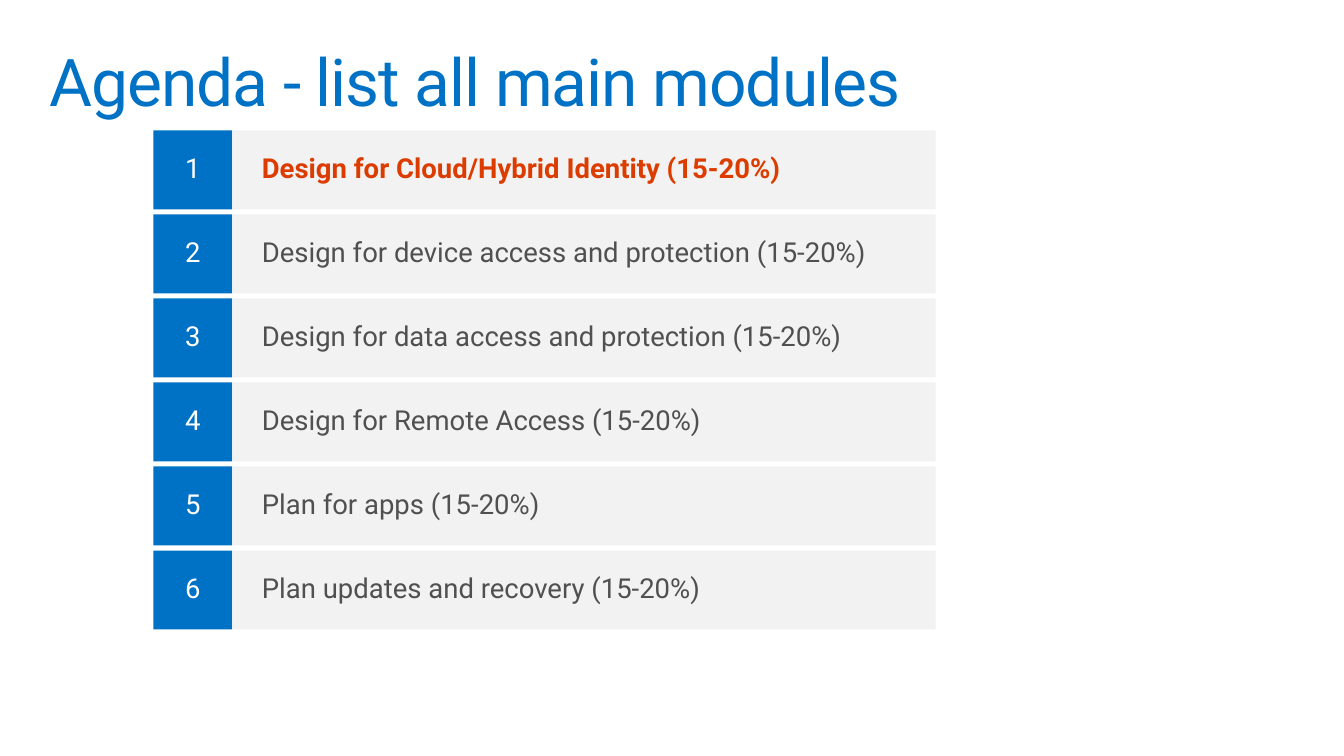
from pptx import Presentation
from pptx.dml.color import RGBColor
from pptx.enum.shapes import MSO_SHAPE
from pptx.enum.text import MSO_ANCHOR, PP_ALIGN
from pptx.util import Cm, Pt

# Content
TITLE = "Agenda - list all main modules"
MODULES = [
    "Design for Cloud/Hybrid Identity (15-20%)",
    "Design for device access and protection (15-20%)",
    "Design for data access and protection (15-20%)",
    "Design for Remote Access (15-20%)",
    "Plan for apps (15-20%)",
    "Plan updates and recovery (15-20%)",
]
CURRENT_MODULE = 1

# Style
COLORS = {
    "blue": "0072C6",
    "band": "F2F2F2",
    "text": "505050",
    "highlight": "DC3C00",
    "white": "FFFFFF",
}
FONT = "Roboto"

# Layout
LIST_LEFT, LIST_TOP = Cm(3.94), Cm(3.35)
ROW_HEIGHT, ROW_PITCH = Cm(2.03), Cm(2.16)
NUMBER_WIDTH, MODULE_WIDTH = ROW_HEIGHT, Cm(18.08)


def write_text(shape, text, size, color, margins, align=PP_ALIGN.LEFT,
               anchor=MSO_ANCHOR.MIDDLE, bold=False):
    frame = shape.text_frame
    frame.word_wrap = True
    frame.vertical_anchor = anchor
    frame.margin_left = frame.margin_right = margins[0]
    frame.margin_top = frame.margin_bottom = margins[1]
    paragraph = frame.paragraphs[0]
    paragraph.text = text
    paragraph.alignment = align
    paragraph.line_spacing = 0.9
    paragraph.font.name = FONT
    paragraph.font.size = Pt(size)
    paragraph.font.bold = bold
    paragraph.font.color.rgb = RGBColor.from_string(COLORS[color])
    return paragraph


def add_box(slide, left, top, width, fill):
    shape = slide.shapes.add_shape(MSO_SHAPE.RECTANGLE, left, top, width, ROW_HEIGHT)
    shape.shadow.inherit = False
    shape.fill.solid()
    shape.fill.fore_color.rgb = RGBColor.from_string(COLORS[fill])
    shape.line.fill.background()
    return shape


def main():
    presentation = Presentation()
    presentation.slide_width, presentation.slide_height = Cm(34.54), Cm(19.43)
    slide = presentation.slides.add_slide(presentation.slide_layouts[6])

    # Title, with slightly tightened letters
    title = slide.shapes.add_textbox(Cm(1.02), Cm(1.02), Cm(32.51), Cm(2.54))
    paragraph = write_text(title, TITLE, 48, "blue", (Cm(0.25), Cm(0.25)),
                           anchor=MSO_ANCHOR.TOP)
    paragraph.runs[0]._r.get_or_add_rPr().set("spc", "-70")

    # Agenda rows: number box and module band
    for number, module in enumerate(MODULES, start=1):
        top = LIST_TOP + (number - 1) * ROW_PITCH
        current = number == CURRENT_MODULE
        number_box = add_box(slide, LIST_LEFT, top, NUMBER_WIDTH, "blue")
        write_text(number_box, str(number), 20, "white", (Cm(0.51), Cm(0.41)),
                   align=PP_ALIGN.CENTER)
        band = add_box(slide, LIST_LEFT + NUMBER_WIDTH, top, MODULE_WIDTH, "band")
        write_text(band, module, 20, "highlight" if current else "text",
                   (Cm(0.76), Cm(0.25)), bold=current)

    presentation.save("out.pptx")


if __name__ == "__main__":
    main()
